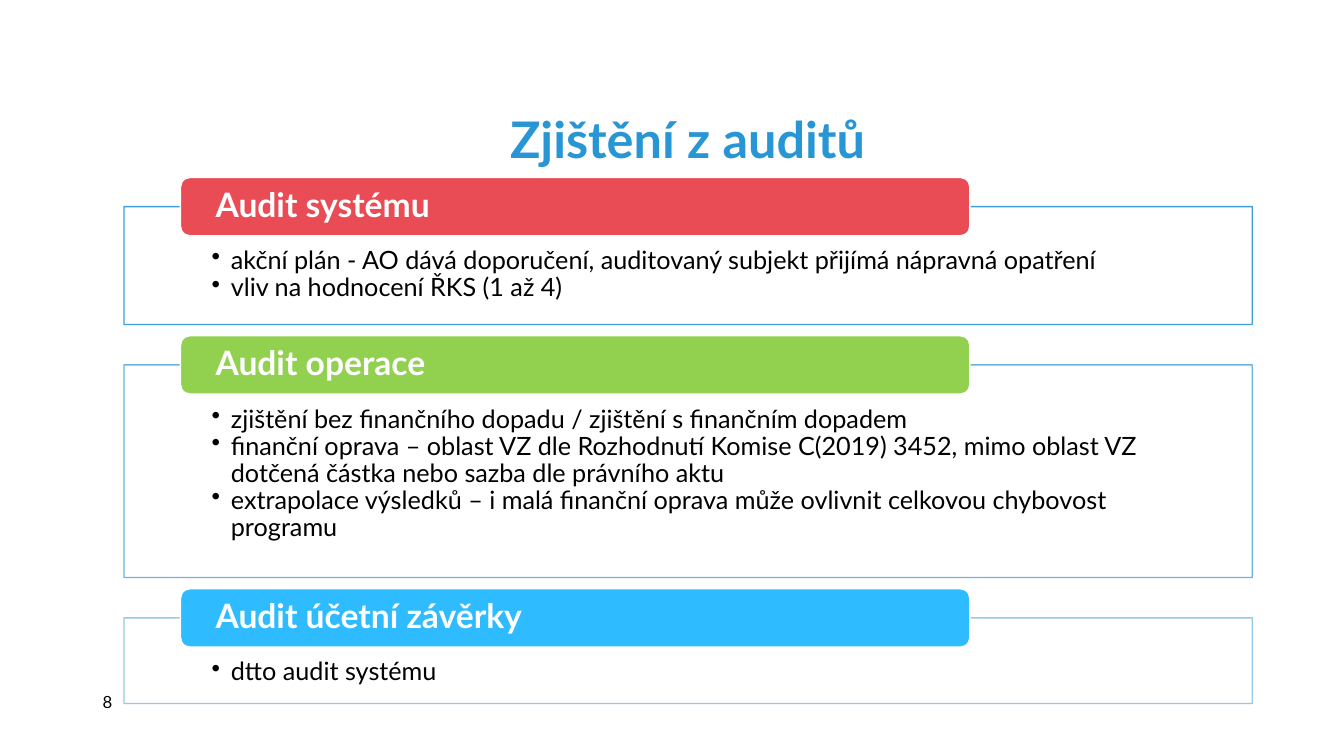
from lxml.etree import SubElement
from pptx import Presentation
from pptx.dml.color import RGBColor
from pptx.enum.shapes import MSO_SHAPE
from pptx.enum.text import MSO_ANCHOR, PP_ALIGN
from pptx.oxml.ns import qn
from pptx.util import Emu, Pt

FONT = "Lato"
BLUE = RGBColor(0x28, 0x96, 0xD4)
FRAME_BLUE = RGBColor(0x28, 0x96, 0xD3)
RED = RGBColor(0xE9, 0x4C, 0x55)
GREEN = RGBColor(0x92, 0xD0, 0x50)
SKY = RGBColor(0x2E, 0xBB, 0xFF)
WHITE = RGBColor(0xFF, 0xFF, 0xFF)
BLACK = RGBColor(0, 0, 0)

FRAME_LEFT, FRAME_WIDTH, FIRST_TOP, FRAME_GAP = 123, 1119, 205, 40
LABEL_LEFT, LABEL_WIDTH, LABEL_HEIGHT = 179, 783, 58

# Heading, colour, frame height, outline opacity in percent, findings
SECTIONS = [
    ("Audit systému", RED, 117, 90, [
        "akční plán - AO dává doporučení, auditovaný subjekt přijímá nápravná opatření",
        "vliv na hodnocení ŘKS (1 až 4)",
    ]),
    ("Audit operace", GREEN, 211, 70, [
        "zjištění bez finančního dopadu / zjištění s finančním dopadem",
        "finanční oprava – oblast VZ dle Rozhodnutí Komise C(2019) 3452, "
        "mimo oblast VZ dotčená částka nebo sazba dle právního aktu",
        "extrapolace výsledků – i malá finanční oprava může ovlivnit "
        "celkovou chybovost programu",
    ]),
    ("Audit účetní závěrky", SKY, 85, 50, ["dtto audit systému"]),
]


def px(count):
    """100 px to the inch."""
    return Emu(count * 9144)


def place(shape, left, top, width, height):
    shape.left, shape.top = px(left), px(top)
    shape.width, shape.height = px(width), px(height)


def set_margins(text_frame, side, top, bottom):
    text_frame.margin_left = text_frame.margin_right = px(side)
    text_frame.margin_top, text_frame.margin_bottom = px(top), px(bottom)


def format_para(para, size, color, bold=False, align=PP_ALIGN.LEFT, spacing=0.9):
    para.alignment = align
    para.line_spacing = spacing
    para.space_before = para.space_after = Pt(0)
    for span in para.runs:
        span.font.name = FONT
        span.font.size = Pt(size)
        span.font.bold = bold
        span.font.color.rgb = color


def add_bullet(para):
    properties = para._p.get_or_add_pPr()
    properties.set("marL", str(px(19)))
    properties.set("indent", str(-px(19)))
    SubElement(properties, qn("a:buChar"), char="•")


def set_opacity(fill, percent):
    color = fill._xPr.find(qn("a:solidFill"))[0]
    SubElement(color, qn("a:alpha"), val=str(percent * 1000))


def add_block(page, kind, bounds, fill, outline):
    block = page.shapes.add_shape(kind, *map(px, bounds))
    block.shadow.inherit = False
    block.fill.solid()
    block.fill.fore_color.rgb = fill
    block.line.color.rgb = outline
    block.line.width = Pt(1)
    block.text_frame.word_wrap = True
    return block


def add_frame(page, top, height, opacity, findings):
    frame = add_block(page, MSO_SHAPE.RECTANGLE,
                      (FRAME_LEFT, top, FRAME_WIDTH, height), WHITE, FRAME_BLUE)
    set_opacity(frame.fill, 90)
    set_opacity(frame.line.fill, opacity)
    text_frame = frame.text_frame
    text_frame.vertical_anchor = MSO_ANCHOR.TOP
    set_margins(text_frame, 87, 41, 14)
    text_frame.text = "\n".join(findings)
    for para in text_frame.paragraphs:
        add_bullet(para)
        format_para(para, 18, BLACK)


def add_label(page, frame_top, heading, color):
    bounds = (LABEL_LEFT, frame_top - LABEL_HEIGHT // 2, LABEL_WIDTH, LABEL_HEIGHT)
    label = add_block(page, MSO_SHAPE.ROUNDED_RECTANGLE, bounds, color, WHITE)
    label.text_frame.vertical_anchor = MSO_ANCHOR.MIDDLE
    set_margins(label.text_frame, 32, 0, 0)
    label.text_frame.text = heading
    format_para(label.text_frame.paragraphs[0], 24, WHITE, bold=True)


def add_title(page, text):
    title = page.shapes.title
    place(title, 107, 93, 1150, 81)
    title.text_frame.text = text
    title.text_frame.vertical_anchor = MSO_ANCHOR.MIDDLE
    format_para(title.text_frame.paragraphs[0], 36, BLUE, True, PP_ALIGN.CENTER, 1.13)


def add_page_number(page, number):
    box = page.shapes.add_textbox(px(92), px(675), px(48), px(43))
    box.text_frame.word_wrap = True
    box.text_frame.vertical_anchor = MSO_ANCHOR.MIDDLE
    box.text_frame.text = number
    format_para(box.text_frame.paragraphs[0], 12, BLACK, spacing=1.0)


def main():
    deck = Presentation()
    deck.slide_width, deck.slide_height = px(1333), px(750)
    page = deck.slides.add_slide(deck.slide_layouts[5])

    add_title(page, "Zjištění z auditů")
    add_page_number(page, "8")

    # Audit sections, stacked with equal gaps
    top = FIRST_TOP
    for heading, color, height, opacity, findings in SECTIONS:
        add_frame(page, top, height, opacity, findings)
        add_label(page, top, heading, color)
        top += height + FRAME_GAP

    deck.save("out.pptx")


if __name__ == "__main__":
    main()
